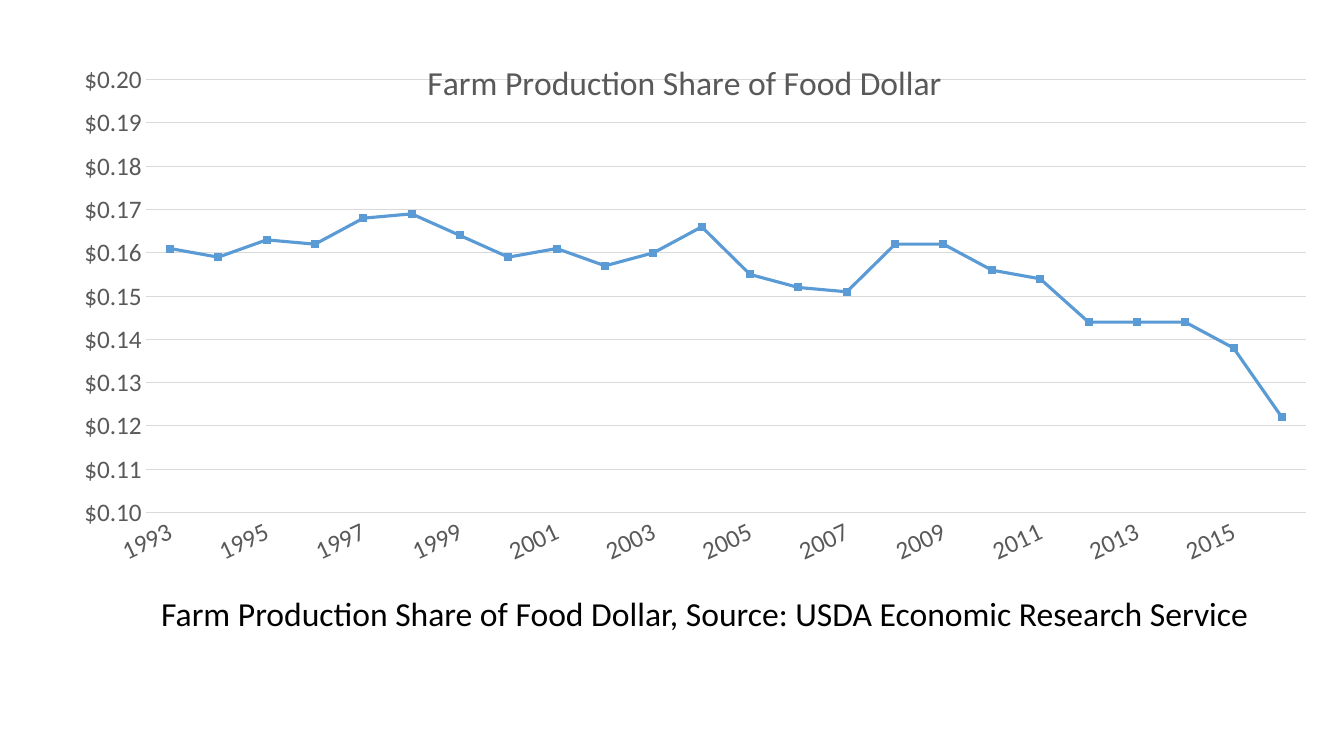
from lxml import etree
from pptx import Presentation
from pptx.chart.data import CategoryChartData
from pptx.dml.color import RGBColor
from pptx.enum.chart import XL_CHART_TYPE, XL_TICK_MARK
from pptx.enum.text import MSO_AUTO_SIZE
from pptx.oxml import parse_xml
from pptx.oxml.ns import nsdecls, qn
from pptx.util import Inches, Pt

LINE_CHART = XL_CHART_TYPE.LINE
NO_TICK = XL_TICK_MARK.NONE
FIT_SHAPE = MSO_AUTO_SIZE.SHAPE_TO_FIT_TEXT

FONT = "Calibri"
COLORS = {"text": "000000", "label": "595959", "grid": "D9D9D9", "share": "5B9BD5"}
TITLE = "Farm Production Share of Food Dollar"
CAPTION = f"{TITLE}, Source: USDA Economic Research Service"
FIRST_YEAR = 1993
SHARES = [
    0.161, 0.159, 0.163, 0.162, 0.168, 0.169, 0.164, 0.159,
    0.161, 0.157, 0.16, 0.166, 0.155, 0.152, 0.151, 0.162,
    0.162, 0.156, 0.154, 0.144, 0.144, 0.144, 0.138, 0.122,
]


def style_font(font, size, color):
    """Give a font the slide's typeface, a size and a colour."""
    for name, value in {"name": FONT, "size": Pt(size), "bold": False}.items():
        setattr(font, name, value)
    font.color.rgb = RGBColor.from_string(COLORS[color])


def style_line(line, color, width):
    """Set the colour and width of a line."""
    line.color.rgb = RGBColor.from_string(COLORS[color])
    line.width = Pt(width)


def manual_layout(inner=False, **fractions):
    """Build a chart layout from fractions of the chart area."""
    target = '<c:layoutTarget val="inner"/>' if inner else ""
    modes = "".join(f'<c:{key}Mode val="edge"/>' for key in ("x", "y"))
    places = "".join(f'<c:{key} val="{value}"/>' for key, value in fractions.items())
    return parse_xml(
        f'<c:layout {nsdecls("c")}><c:manualLayout>{target}{modes}{places}'
        "</c:manualLayout></c:layout>"
    )


def add_title(chart):
    """Put the title over the top of the plot."""
    title = chart.chart_title
    title.include_in_layout = True
    span = title.text_frame.paragraphs[0].add_run()
    span.text = TITLE
    style_font(span.font, 24, "label")
    element = title._element
    for layout in element.findall(qn("c:layout")):
        element.remove(layout)
    element.find(qn("c:tx")).addnext(manual_layout(x=0.3, y=0.05))


def style_axes(chart):
    """Format the year axis and the dollar axis."""
    years, dollars = chart.category_axis, chart.value_axis
    for axis in (years, dollars):
        axis.major_tick_mark = axis.minor_tick_mark = NO_TICK
        style_font(axis.tick_labels.font, 18, "label")
    style_line(years.format.line, "grid", 0.75)
    years._element.find(qn("c:txPr")).find(qn("a:bodyPr")).set("rot", "-1500000")
    skip = etree.Element(qn("c:tickLblSkip"), val="2")
    years._element.find(qn("c:noMultiLvlLbl")).addprevious(skip)
    scale = {"minimum_scale": 0.1, "maximum_scale": 0.2, "major_unit": 0.01}
    for name, value in scale.items():
        setattr(dollars, name, value)
    dollars.format.line.fill.background()
    style_line(dollars.major_gridlines.format.line, "grid", 0.75)
    dollars.tick_labels.number_format = '"$"#,##0.00'
    dollars.tick_labels.number_format_is_linked = False


def add_share_chart(page):
    """Add the line chart of the farm share by year."""
    data = CategoryChartData()
    data.categories = [str(FIRST_YEAR + step) for step in range(len(SHARES))]
    data.add_series("Series 1", SHARES)
    chart = page.shapes.add_chart(
        LINE_CHART, Inches(0.33), Inches(0.25), Inches(12.83), Inches(5.69), data
    ).chart
    chart.has_legend = False
    style_font(chart.font, 16, "text")
    add_title(chart)
    style_axes(chart)
    plot = chart.plots[0]
    plot.vary_by_categories = False
    series = plot.series[0]
    series.smooth = False
    series.marker.style = None
    style_line(series.format.line, "share", 2.25)
    area = chart._chartSpace.chart.plotArea
    for layout in area.findall(qn("c:layout")):
        area.remove(layout)
    area.insert(0, manual_layout(inner=True, x=0.087, y=0.095, w=0.897, h=0.755))


def add_caption(page):
    """Add the source line below the chart."""
    box = page.shapes.add_textbox(Inches(1.5), Inches(5.83), Inches(11.25), Inches(0.5))
    frame = box.text_frame
    frame.word_wrap = True
    frame.auto_size = FIT_SHAPE
    span = frame.paragraphs[0].add_run()
    span.text = CAPTION
    style_font(span.font, 24, "text")


def main():
    """Build the slide and save it."""
    deck = Presentation()
    deck.slide_width, deck.slide_height = Inches(13.33), Inches(7.5)
    page = deck.slides.add_slide(deck.slide_layouts[6])
    add_share_chart(page)
    add_caption(page)
    deck.save("out.pptx")


if __name__ == "__main__":
    main()
